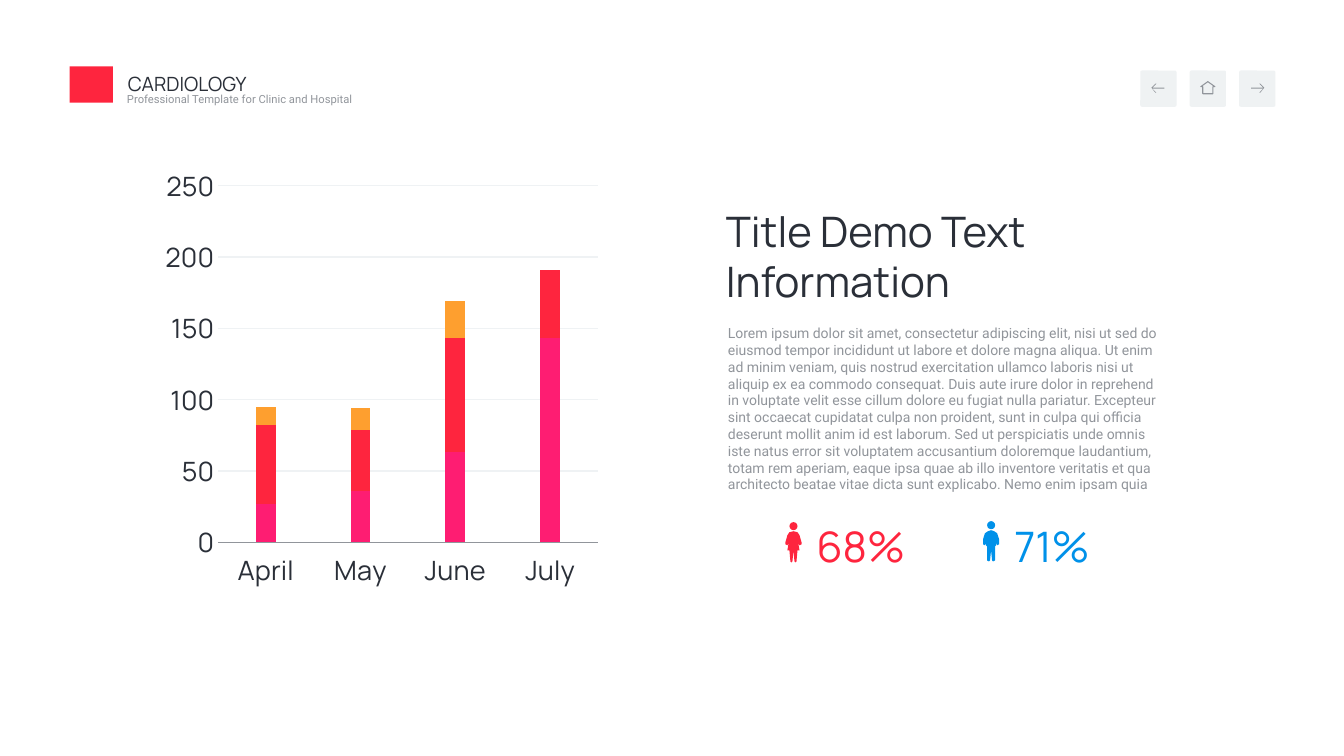
import pptx
import pptx.chart.data
import pptx.dml.color
import pptx.enum.chart
import pptx.enum.shapes
import pptx.enum.text
import pptx.util
from dataclasses import dataclass
from lxml import etree

Inches = pptx.util.Inches
Pt = pptx.util.Pt
SHAPE = pptx.enum.shapes.MSO_SHAPE
ANCHOR = pptx.enum.text.MSO_ANCHOR


@dataclass(frozen=True)
class Theme:
    ink: str = "2A2F38"
    muted: str = "91959B"
    button: str = "EFF2F3"
    grid: str = "EFF2F4"
    pink: str = "FE1D72"
    red: str = "FE253E"
    orange: str = "FE9F2F"
    blue: str = "0091E9"
    heading_font: str = "Manrope"
    body_font: str = "Roboto"
    title: int = 30
    axis: int = 20
    brand: int = 14
    body: int = 10
    tagline: int = 8


T = Theme()
BODY = (
    "Lorem ipsum dolor sit amet, consectetur adipiscing elit, nisi ut sed do "
    "eiusmod tempor incididunt ut labore et dolore magna aliqua. Ut enim ad minim "
    "veniam, quis nostrud exercitation ullamco laboris nisi ut aliquip ex ea commodo "
    "consequat. Duis aute irure dolor in reprehend in voluptate velit esse cillum "
    "dolore eu fugiat nulla pariatur. Excepteur sint occaecat cupidatat culpa non "
    "proident, sunt in culpa qui officia deserunt mollit anim id est laborum. Sed ut "
    "perspiciatis unde omnis iste natus error sit voluptatem accusantium doloremque "
    "laudantium, totam rem aperiam, eaque ipsa quae ab illo inventore veritatis et qua "
    "architecto beatae vitae dicta sunt explicabo. Nemo enim ipsam quia"
)
WOMAN = [(0, .09), (.04, .1), (.06, .13), (.08, .2), (.08, .22), (.06, .23), (.05, .21),
         (.04, .16), (.06, .28), (.04, .28), (.03, .39), (.02, .4), (.01, .39), (0, .28)]
MAN = [(0, .09), (.03, .1), (.06, .12), (.08, .18), (.08, .23), (.06, .24), (.05, .22),
       (.04, .15), (.05, .24), (.04, .25), (.04, .39), (.02, .4), (.01, .39), (0, .29)]
ARROW = [(.07, 0), (.03, -.04), (.02, -.04), (.06, 0), (-.06, 0), (-.06, .01),
         (.06, .01), (.02, .05), (.03, .05)]
HOUSE = [(-.07, -.01), (0, -.06), (.07, -.01), (.05, -.01), (.05, .06),
         (-.05, .06), (-.05, -.01)]


def rgb(value):
    return pptx.dml.color.RGBColor.from_string(value)


def style_font(font, size, color, name):
    font.size = Pt(size)
    font.color.rgb = rgb(color)
    font.name = name


def paint(sp, fill=None, line=None):
    sp.shadow.inherit = False
    if fill:
        sp.fill.solid()
        sp.fill.fore_color.rgb = rgb(fill)
    else:
        sp.fill.background()
    if line:
        sp.line.color.rgb = rgb(line)
        sp.line.width = Pt(0.75)
    else:
        sp.line.fill.background()
    return sp


def add_text(s, text, x, y, w, h, *, size, color=T.ink, font=T.heading_font,
             inset=0.03, anchor=ANCHOR.TOP):
    tf = s.shapes.add_textbox(Inches(x), Inches(y), Inches(w), Inches(h)).text_frame
    tf.word_wrap = True
    tf.vertical_anchor = anchor
    tf.margin_left = tf.margin_right = tf.margin_top = tf.margin_bottom = Inches(inset)
    r = tf.paragraphs[0].add_run()
    r.text = text
    style_font(r.font, size, color, font)


def add_preset(s, kind, x, y, w, h, fill):
    return paint(s.shapes.add_shape(kind, Inches(x), Inches(y), Inches(w), Inches(h)), fill)


def add_outline(s, points, x, y, fill=None, line=None):
    placed = [(Inches(x + dx), Inches(y + dy)) for dx, dy in points]
    builder = s.shapes.build_freeform(*placed[0])
    builder.add_line_segments(placed[1:], close=True)
    paint(builder.convert_to_shape(), fill, line)


def add_button(s, x):
    sp = add_preset(s, SHAPE.ROUNDED_RECTANGLE, x, 0.7, 0.36, 0.36, T.button)
    sp.adjustments[0] = 0.05


def add_arrow(s, x, direction):
    add_outline(s, [(direction * dx, dy) for dx, dy in ARROW], x, 0.87, fill=T.muted)


def add_navigation(s):
    for i, direction in enumerate((-1, 0, 1)):
        x = 11.31 + 0.49 * i
        add_button(s, x)
        if direction:
            add_arrow(s, x + 0.18, direction)
        else:
            add_outline(s, HOUSE, x + 0.18, 0.87, line=T.muted)


def add_statistic(s, half, x, y, value, color):
    add_preset(s, SHAPE.OVAL, x - 0.04, y, 0.08, 0.08, color)
    mirrored = [(-dx, dy) for dx, dy in reversed(half)]
    add_outline(s, half + mirrored, x, y, fill=color)
    add_text(s, value, x + 0.2, 5.13, 1.37, 0.56, size=T.title, color=color)


def set_plot_area(chart, **box):
    plot = chart._chartSpace.chart.plotArea
    ns = plot.nsmap["c"]
    for old in plot.findall(f"{{{ns}}}layout"):
        plot.remove(old)
    layout = etree.Element(f"{{{ns}}}layout")
    manual = etree.SubElement(layout, f"{{{ns}}}manualLayout")
    settings = dict(layoutTarget="inner", xMode="edge", yMode="edge", **box)
    for tag, val in settings.items():
        etree.SubElement(manual, f"{{{ns}}}{tag}").set("val", str(val))
    plot.insert(0, layout)


def add_monthly_chart(s):
    data = pptx.chart.data.CategoryChartData()
    data.categories = ["April", "May", "June", "July"]
    data.add_series("Series 1", (27, 36, 63, 143))
    data.add_series("Series 2", (55, 43, 80, 48))
    data.add_series("Series 3", (13, 15, 26, 0))
    chart = s.shapes.add_chart(
        pptx.enum.chart.XL_CHART_TYPE.COLUMN_STACKED,
        Inches(1.64), Inches(1.66), Inches(4.33), Inches(4.18), data).chart
    chart.has_legend = False
    chart.has_title = False
    style_font(chart.font, T.axis, T.ink, T.heading_font)
    plot = chart.plots[0]
    plot.gap_width = 380
    plot.overlap = 100
    plot.vary_by_categories = False
    for series, color in zip(plot.series, (T.pink, T.red, T.orange)):
        series.format.fill.solid()
        series.format.fill.fore_color.rgb = rgb(color)
    months, values = chart.category_axis, chart.value_axis
    for axis in (months, values):
        axis.major_tick_mark = pptx.enum.chart.XL_TICK_MARK.NONE
        style_font(axis.tick_labels.font, T.axis, T.ink, T.heading_font)
    months.tick_label_position = pptx.enum.chart.XL_TICK_LABEL_POSITION.LOW
    months.format.line.color.rgb = rgb(T.muted)
    months.format.line.width = Pt(1)
    values.minimum_scale, values.maximum_scale, values.major_unit = 0, 250, 50
    values.format.line.fill.background()
    values.major_gridlines.format.line.color.rgb = rgb(T.grid)
    values.major_gridlines.format.line.width = Pt(1)
    set_plot_area(chart, x=0.09, y=0.04, w=0.9, h=0.89)


def add_header(s):
    add_preset(s, SHAPE.RECTANGLE, 0.69, 0.66, 0.43, 0.36, T.red)
    add_text(s, "CARDIOLOGY", 1.21, 0.65, 1.56, 0.35, size=T.brand, inset=0.06)
    add_text(s, "Professional Template for Clinic and Hospital", 1.2, 0.86, 3.47, 0.25,
             size=T.tagline, color=T.muted, font=T.body_font, inset=0.06,
             anchor=ANCHOR.MIDDLE)
    add_navigation(s)


def main():
    prs = pptx.Presentation()
    prs.slide_width, prs.slide_height = Inches(13.33), Inches(7.5)
    s = prs.slides.add_slide(prs.slide_layouts[6])
    add_header(s)
    add_monthly_chart(s)
    add_text(s, "Title Demo Text Information", 7.17, 2.01, 4.43, 1.07, size=T.title)
    add_text(s, BODY, 7.19, 3.19, 4.33, 1.74, size=T.body, color=T.muted, font=T.body_font)
    add_statistic(s, WOMAN, 7.87, 5.18, "68%", T.red)
    add_statistic(s, MAN, 9.83, 5.17, "71%", T.blue)
    prs.save("out.pptx")


if __name__ == "__main__":
    main()
